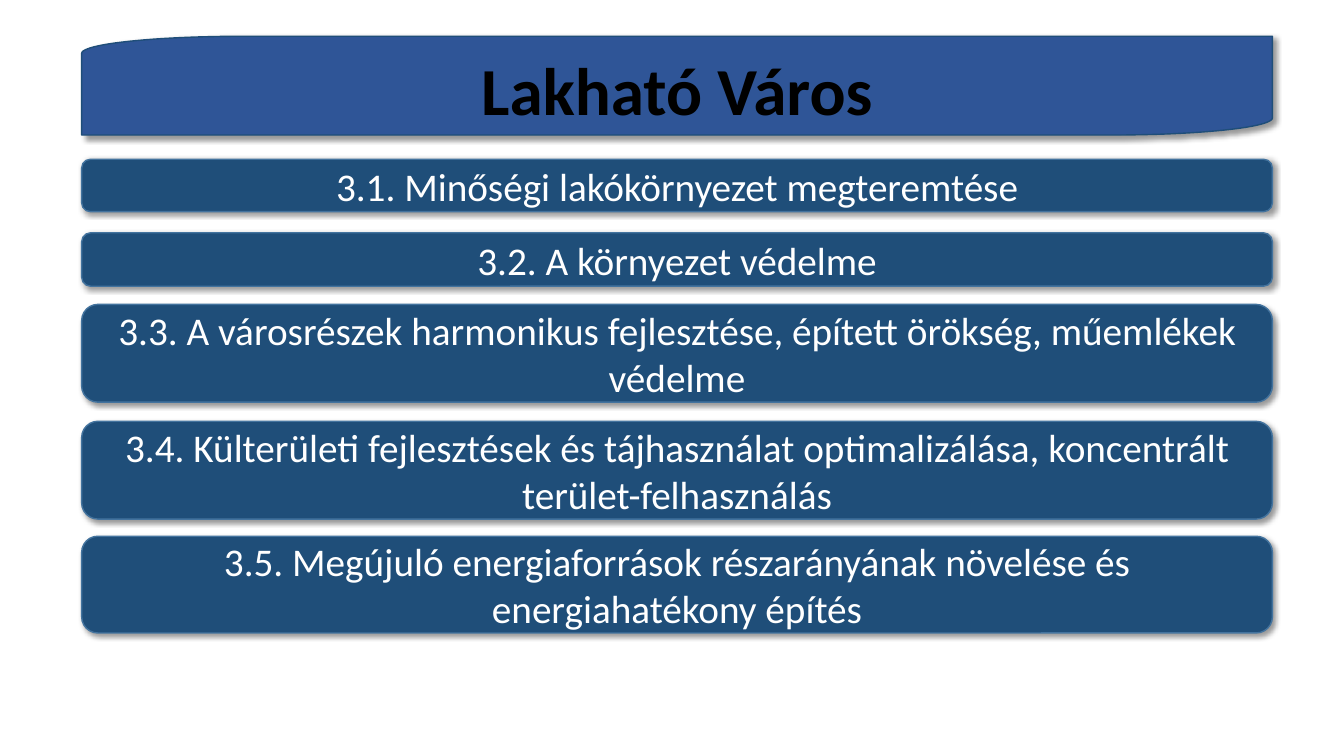
from dataclasses import dataclass
from math import cos, pi, sin

from lxml import etree
from pptx import Presentation
from pptx.dml.color import RGBColor
from pptx.enum import shapes, text
from pptx.oxml import ns
from pptx.util import Inches, Pt


@dataclass(frozen=True)
class Theme:
    font: str = "Calibri"
    title_size: int = 48
    goal_size: int = 28
    banner: str = "2F5597"
    navy: str = "1F4E79"
    goal_line: str = "43739E"
    black: str = "000000"
    white: str = "FFFFFF"


theme = Theme()
LEFT, WIDTH = 0.81, 11.81
BANNER_TOP, BANNER_HEIGHT = 0.36, 0.98
CORNER_WIDTH, CORNER_HEIGHT = 1.61, 0.17
CORNER_STEPS = 24
GOALS = [
    (1.58, 0.52, "3.1. Minőségi lakókörnyezet megteremtése"),
    (2.31, 0.53, "3.2. A környezet védelme"),
    (3.02, 0.97, "3.3. A városrészek harmonikus fejlesztése, épített örökség, műemlékek védelme"),
    (4.18, 0.97, "3.4. Külterületi fejlesztések és tájhasználat optimalizálása, koncentrált terület-felhasználás"),
    (5.32, 0.96, "3.5. Megújuló energiaforrások részarányának növelése és energiahatékony építés"),
]


def style_shape(shape, fill, line, shadow_distance):
    """Set fill and outline, and cast a soft shadow to the lower right."""
    shape.fill.solid()
    shape.fill.fore_color.rgb = RGBColor.from_string(fill)
    shape.line.color.rgb = RGBColor.from_string(line)
    shape.line.width = Pt(1)
    shape.shadow.inherit = False
    effects = shape._element.spPr.find(ns.qn("a:effectLst"))
    shadow = etree.SubElement(
        effects, ns.qn("a:outerShdw"), blurRad=str(Pt(4)),
        dist=str(Pt(shadow_distance)), dir=str(45 * 60000), algn="tl", rotWithShape="0")
    color = etree.SubElement(shadow, ns.qn("a:srgbClr"), val=theme.black)
    etree.SubElement(color, ns.qn("a:alpha"), val="40000")


def write_text(shape, words, size, color, bold=False):
    """Write one centred paragraph and return it."""
    frame = shape.text_frame
    frame.text = words
    frame.word_wrap = True
    frame.auto_size = text.MSO_AUTO_SIZE.NONE
    frame.vertical_anchor = text.MSO_ANCHOR.MIDDLE
    paragraph = frame.paragraphs[0]
    paragraph.alignment = text.PP_ALIGN.CENTER
    paragraph.font.name = theme.font
    paragraph.font.size = Pt(size)
    paragraph.font.bold = bold
    paragraph.font.color.rgb = RGBColor.from_string(color)
    return paragraph


presentation = Presentation()
presentation.slide_width = Inches(13.33)
presentation.slide_height = Inches(7.5)
slide = presentation.slides.add_slide(presentation.slide_layouts[5])

# Banner: two opposite corners are quarter ellipses, the other two are square
right, bottom = LEFT + WIDTH, BANNER_TOP + BANNER_HEIGHT
angles = [pi / 2 * step / CORNER_STEPS for step in range(CORNER_STEPS + 1)]
top_left = [(LEFT + CORNER_WIDTH * (1 - cos(angle)),
             BANNER_TOP + CORNER_HEIGHT * (1 - sin(angle))) for angle in angles]
bottom_right = [(right - CORNER_WIDTH * (1 - cos(angle)),
                 bottom - CORNER_HEIGHT * (1 - sin(angle))) for angle in angles]
outline = top_left + [(right, BANNER_TOP)] + bottom_right + [(LEFT, bottom)]
points = [(Inches(x), Inches(y)) for x, y in outline]
builder = slide.shapes.build_freeform(*points[0])
builder.add_line_segments(points[1:], close=True)
banner = builder.convert_to_shape()
style_shape(banner, theme.banner, theme.navy, 3)

# Title placeholder lies in front of the banner
title = slide.shapes.title
banner._element.addnext(title._element)
title.left, title.top = Inches(LEFT), Inches(BANNER_TOP)
title.width, title.height = Inches(WIDTH), Inches(BANNER_HEIGHT)
heading = write_text(title, "Lakható Város", theme.title_size, theme.black, bold=True)
heading.line_spacing = 1.07
heading.space_after = Pt(8)

for top, height, words in GOALS:
    goal = slide.shapes.add_shape(
        shapes.MSO_SHAPE.ROUNDED_RECTANGLE,
        Inches(LEFT), Inches(top), Inches(WIDTH), Inches(height))
    style_shape(goal, theme.navy, theme.goal_line, 2)
    write_text(goal, words, theme.goal_size, theme.white)

presentation.save("out.pptx")
